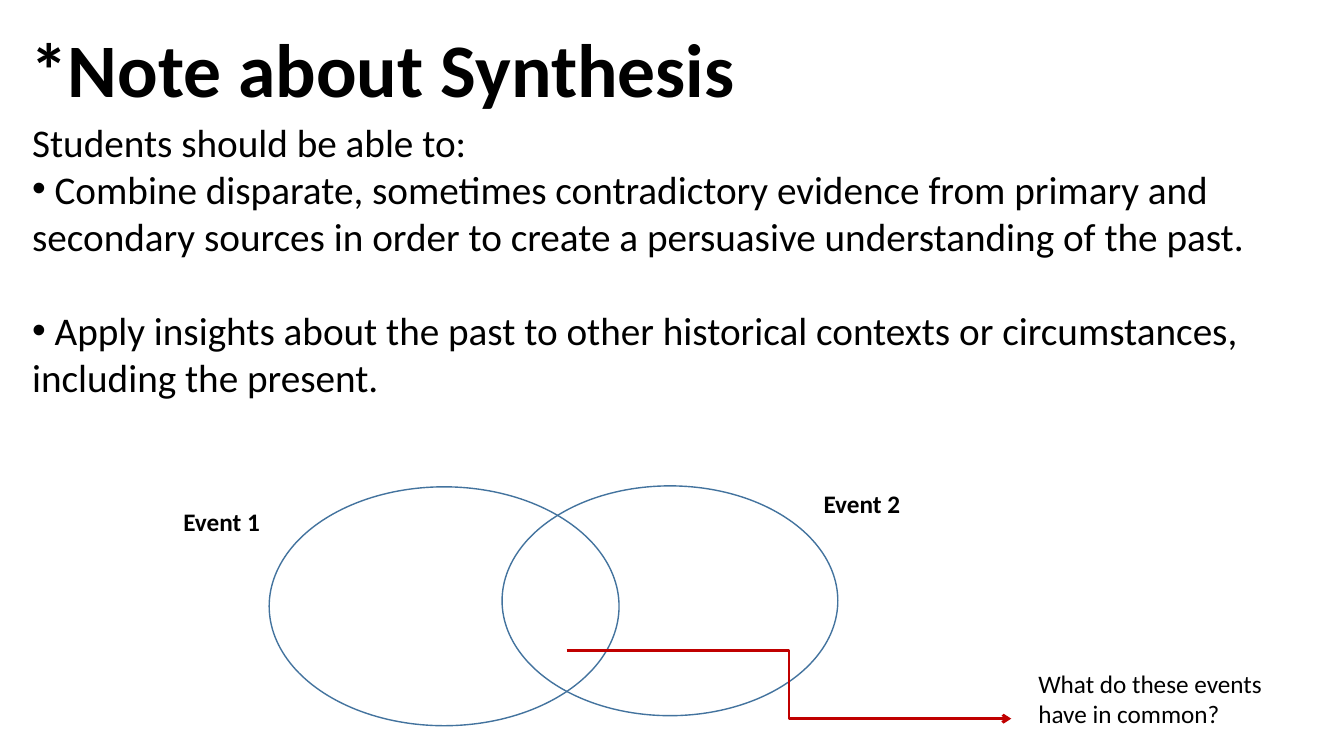
from lxml import etree
from pptx import Presentation
from pptx.dml.color import RGBColor
from pptx.enum.shapes import MSO_CONNECTOR, MSO_SHAPE
from pptx.enum.text import MSO_ANCHOR
from pptx.oxml.ns import qn
from pptx.util import Inches, Pt

ELBOW = MSO_CONNECTOR.ELBOW
OVAL = MSO_SHAPE.OVAL
TOP, MIDDLE = MSO_ANCHOR.TOP, MSO_ANCHOR.MIDDLE
BLACK = RGBColor(0x00, 0x00, 0x00)
BLUE = RGBColor(0x43, 0x73, 0x9E)
RED = RGBColor(0xC0, 0x00, 0x00)

presentation = Presentation()
presentation.slide_width = Inches(13.33)
presentation.slide_height = Inches(7.5)
slide = presentation.slides.add_slide(presentation.slide_layouts[6])


def add_text(text, left, top, width, height, size=18, bold=False,
             anchor=TOP, wrap=True, line_spacing=1.0):
    box = slide.shapes.add_textbox(Inches(left), Inches(top), Inches(width), Inches(height))
    frame = box.text_frame
    frame.word_wrap = wrap
    frame.vertical_anchor = anchor
    frame.text = text
    for paragraph in frame.paragraphs:
        paragraph.line_spacing = line_spacing
        font = paragraph.runs[0].font
        font.name = "Calibri"
        font.size = Pt(size)
        font.bold = bold
        font.color.rgb = BLACK
    return frame


add_text("*Note about Synthesis", 0.2, 0, 11.5, 1.45, size=54, bold=True,
         anchor=MIDDLE, line_spacing=0.9)

skills = add_text(
    "Students should be able to:\n"
    " Combine disparate, sometimes contradictory evidence from primary and "
    "secondary sources in order to create a persuasive understanding of the past.\n"
    " Apply insights about the past to other historical contexts or circumstances, "
    "including the present.",
    0.22, 1.12, 12.58, 3.23, size=28)
skills.paragraphs[2].space_before = Pt(34)
for paragraph in skills.paragraphs[1:]:
    properties = paragraph._p.get_or_add_pPr()
    etree.SubElement(properties, qn("a:buFont"), typeface="Arial")
    etree.SubElement(properties, qn("a:buChar"), char="•")

for left, top, width, height in [(2.67, 4.83, 3.47, 2.37), (4.98, 4.82, 3.33, 2.28)]:
    event_circle = slide.shapes.add_shape(
        OVAL, Inches(left), Inches(top), Inches(width), Inches(height))
    event_circle.shadow.inherit = False
    event_circle.fill.background()
    event_circle.line.color.rgb = BLUE
    event_circle.line.width = Pt(1)

for label, left, top in [("Event 1", 1.72, 4.97), ("Event 2", 8.07, 4.8)]:
    add_text(label, left, top, 0.97, 0.4, bold=True, wrap=False)

overlap_arrow = slide.shapes.add_connector(
    ELBOW, Inches(5.62), Inches(6.45), Inches(10.03), Inches(7.13))
overlap_arrow.line.color.rgb = RED
overlap_arrow.line.width = Pt(2)
etree.SubElement(overlap_arrow.line._get_or_add_ln(), qn("a:tailEnd"), type="arrow")
etree.SubElement(overlap_arrow._element.spPr, qn("a:effectLst"))

add_text("What do these events have in common?", 10.2, 6.58, 2.68, 0.71)

presentation.save("out.pptx")
